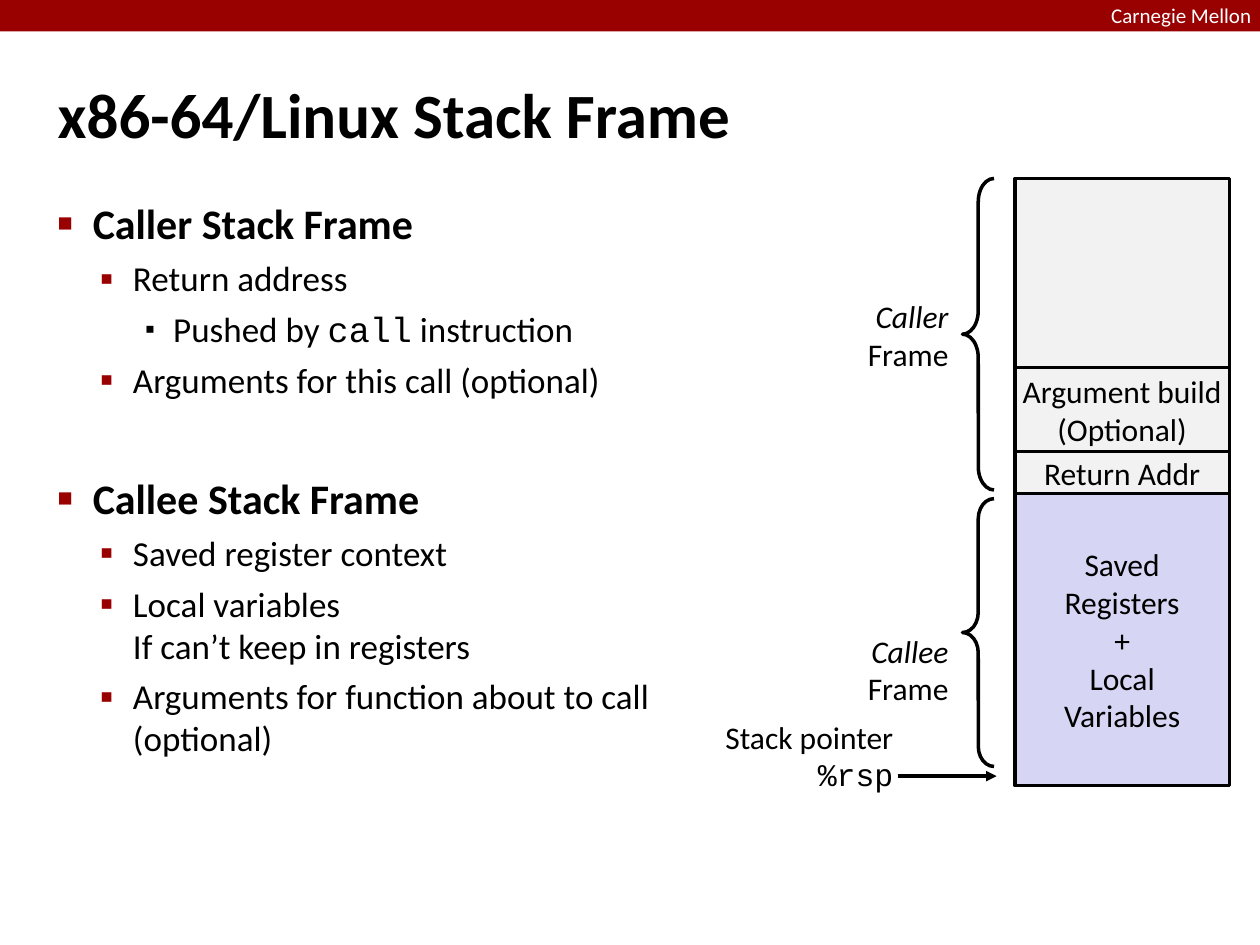
from lxml import etree
from pptx import Presentation
from pptx import util as u
from pptx.dml.color import RGBColor
from pptx.enum import shapes, text
from pptx.oxml import ns

Pt = u.Pt
rgb = RGBColor.from_string
RED, BLACK, WHITE, GRAY, LILAC = "990000", "000000", "FFFFFF", "F2F2F2", "D6D6F4"
LEFT, CENTER, RIGHT = text.PP_ALIGN.LEFT, text.PP_ALIGN.CENTER, text.PP_ALIGN.RIGHT
TOP, MIDDLE = text.MSO_ANCHOR.TOP, text.MSO_ANCHOR.MIDDLE
CODE = {"name": "Courier New"}
ITALIC = {"italic": True}


def write(sp, paragraphs, size=18, color=BLACK, bold=False, align=LEFT,
          anchor=TOP, margin=3, wrap=True):
    """Fill a shape; each paragraph is a list of (text, font overrides) runs."""
    tf = sp.text_frame
    tf.word_wrap, tf.vertical_anchor = wrap, anchor
    tf.margin_left = tf.margin_right = tf.margin_top = tf.margin_bottom = Pt(margin)
    for i, runs in enumerate(paragraphs):
        p = tf.paragraphs[0] if i == 0 else tf.add_paragraph()
        p.alignment = align
        for content, overrides in runs:
            for j, line in enumerate(content.split("\n")):
                if j:
                    p.add_line_break()
                r = p.add_run()
                r.text = line
                font = {"name": "Calibri", "size": Pt(size), "bold": bold, **overrides}
                for key, value in font.items():
                    setattr(r.font, key, value)
                r.font.color.rgb = rgb(color)
    return tf


def sub(parent, tag, **attrs):
    return etree.SubElement(parent, ns.qn(tag), attrs)


prs = Presentation()
prs.slide_width, prs.slide_height = Pt(720), Pt(540)
s = prs.slides.add_slide(prs.slide_layouts[6])

# Header and title
sp = s.shapes.add_shape(shapes.MSO_SHAPE.RECTANGLE, 0, 0, Pt(720), Pt(18))
sp.shadow.inherit = False
sp.fill.solid()
sp.fill.fore_color.rgb = rgb(RED)
sp.line.fill.background()
sp = s.shapes.add_textbox(Pt(635), Pt(1.5), Pt(85), Pt(14))
write(sp, [[("Carnegie Mellon", {})]], size=12, color=WHITE, margin=0, wrap=False)
sp = s.shapes.add_textbox(Pt(30), Pt(20), Pt(660), Pt(90))
write(sp, [[("x86-64/Linux Stack Frame", {})]], size=36, bold=True, anchor=MIDDLE)

# Bulleted text: level and runs
outline = [
    (0, [("Caller Stack Frame", {})]),
    (1, [("Return address", {})]),
    (2, [("Pushed by ", {}), ("call", CODE), (" instruction", {})]),
    (1, [("Arguments for this call (optional)", {})]),
    (0, [("Callee Stack Frame", {})]),
    (1, [("Saved register context", {})]),
    (1, [("Local variables\nIf can’t keep in registers", {})]),
    (1, [("Arguments for function about to call (optional)", {})]),
]
# Per level: left margin, hanging indent, space before, bullet, its colour and percent
levels = [
    (20, 20, 41, "■", RED, 60),
    (43, 19, 5, "▪", RED, 110),
    (66, 16, 5, "▪", BLACK, 80),
]
heading = {"size": Pt(24), "bold": True}
paragraphs = [[(t, heading if level == 0 else f) for t, f in runs] for level, runs in outline]
sp = s.shapes.add_textbox(Pt(30), Pt(110), Pt(423), Pt(428))
tf = write(sp, paragraphs, size=20)
for i, (p, (level, _)) in enumerate(zip(tf.paragraphs, outline)):
    left, hang, space, bullet, color, percent = levels[level]
    p.level = level
    p.space_before = Pt(space if i else 0)
    pPr = p._p.get_or_add_pPr()
    pPr.set("marL", str(Pt(left)))
    pPr.set("indent", str(-Pt(hang)))
    sub(sub(pPr, "a:buClr"), "a:srgbClr", val=color)
    sub(pPr, "a:buSzPct", val=str(percent * 1000))
    sub(pPr, "a:buFont", typeface="Arial")
    sub(pPr, "a:buChar", char=bullet)

# Stack, from the top down: height, fill, lines
y = 102
for height, fill, lines in [
    (108, GRAY, []),
    (48, GRAY, ["Argument build", "(Optional)"]),
    (24, GRAY, ["Return Addr"]),
    (167, LILAC, ["Saved", "Registers", "+", "Local", "Variables"]),
]:
    sp = s.shapes.add_shape(shapes.MSO_SHAPE.RECTANGLE, Pt(580), Pt(y), Pt(122.5), Pt(height))
    sp.shadow.inherit = False
    sp.fill.solid()
    sp.fill.fore_color.rgb = rgb(fill)
    sp.line.color.rgb = rgb(BLACK)
    sp.line.width = Pt(2)
    write(sp, [[(line, {})] for line in lines], align=CENTER, anchor=MIDDLE, margin=0)
    y += height

# Braces with their labels: name, brace top and height, label top
for name, top, height, label_top in [("Caller", 102, 178, 167), ("Callee", 285, 153, 358)]:
    sp = s.shapes.add_shape(shapes.MSO_SHAPE.LEFT_BRACE, Pt(550), Pt(top), Pt(18), Pt(height))
    sp.shadow.inherit = False
    sp.adjustments[0] = height / 240
    sp.fill.background()
    sp.line.color.rgb = rgb(BLACK)
    sp.line.width = Pt(2)
    sp = s.shapes.add_textbox(Pt(491), Pt(label_top), Pt(54), Pt(50))
    write(sp, [[(name, ITALIC)], [("Frame", {})]], align=RIGHT, wrap=False)

# Stack pointer
sp = s.shapes.add_textbox(Pt(397), Pt(407), Pt(116.5), Pt(48))
write(sp, [[("Stack pointer", {})], [("%rsp", CODE)]], align=RIGHT)
arrow = s.shapes.add_connector(shapes.MSO_CONNECTOR.STRAIGHT,
                               Pt(513), Pt(443.5), Pt(569.5), Pt(443.5))
arrow.line.color.rgb = rgb(BLACK)
arrow.line.width = Pt(2)
sub(arrow.line._get_or_add_ln(), "a:tailEnd", type="triangle")
sub(arrow._element.spPr, "a:effectLst")

prs.save("out.pptx")
